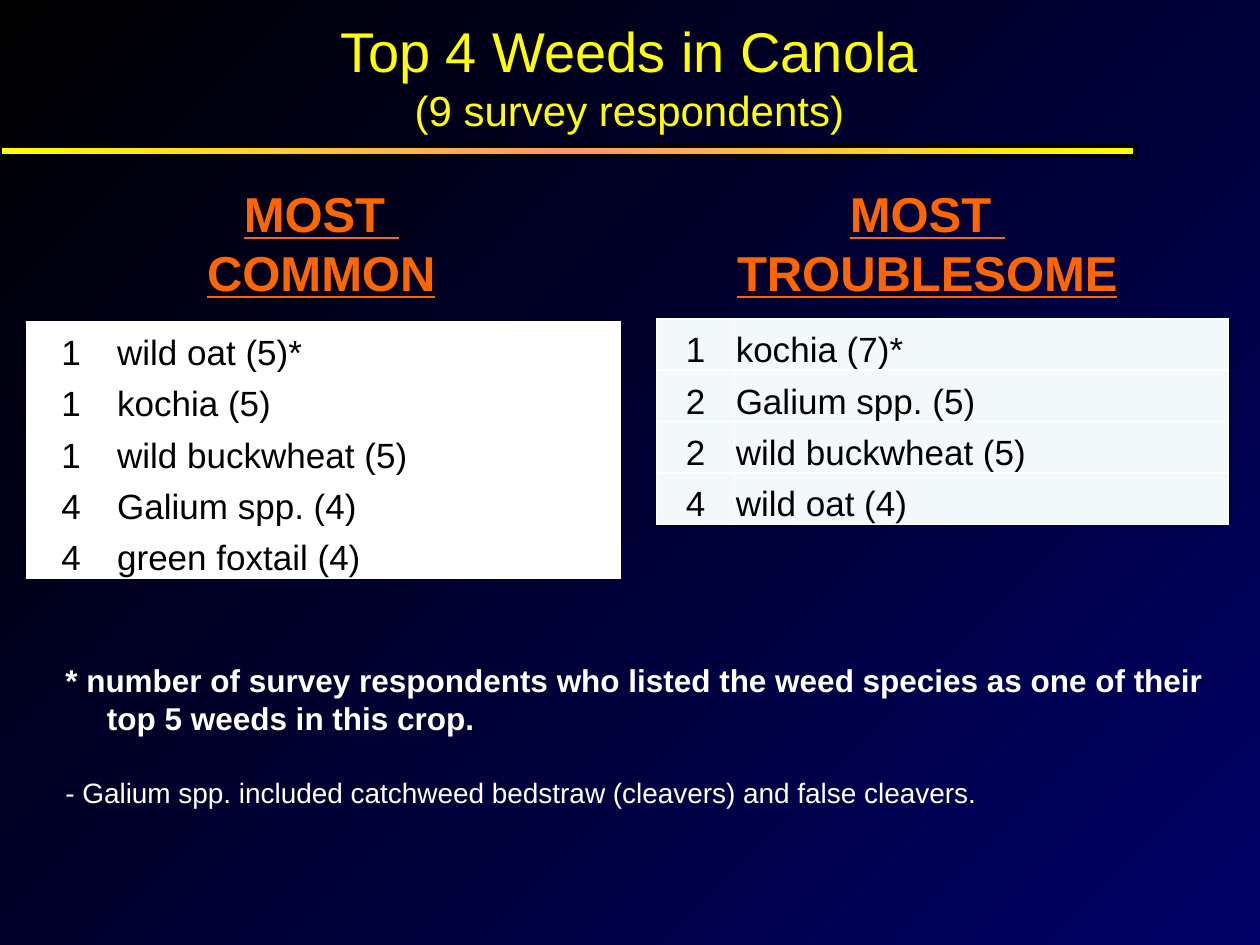
from copy import deepcopy

from lxml.etree import SubElement
from pptx import Presentation
from pptx.dml.color import RGBColor
from pptx.enum.shapes import MSO_SHAPE
from pptx.enum.text import MSO_ANCHOR, PP_ALIGN
from pptx.oxml.ns import qn
from pptx.util import Inches, Pt

COLORS = {
    "black": "000000",
    "navy": "000066",
    "yellow": "FFFF00",
    "peach": "FF9966",
    "orange": "FF6600",
    "white": "FFFFFF",
    "pale": "F3F9FA",
}
COMMON = [("1", "wild oat (5)*"), ("1", "kochia (5)"), ("1", "wild buckwheat (5)"),
          ("4", "Galium spp. (4)"), ("4", "green foxtail (4)")]
TROUBLESOME = [("1", "kochia (7)*"), ("2", "Galium spp. (5)"),
               ("2", "wild buckwheat (5)"), ("4", "wild oat (4)")]
ROW_HEIGHT = 0.408


def rgb(name):
    return RGBColor.from_string(COLORS[name])


def format_paragraph(p, size, color, align=PP_ALIGN.LEFT, bold=False, underline=False):
    p.alignment = align
    p.font.name = "Arial"
    p.font.size = Pt(size)
    p.font.color.rgb = rgb(color)
    p.font.bold = bold
    p.font.underline = underline


def set_gradient(fill, element, names, angle):
    """Fill with evenly spaced colours; element is the XML that holds the fill."""
    fill.gradient()
    fill.gradient_angle = angle
    stop_list = next(element.iter(qn("a:gsLst")))
    for _ in names[2:]:
        stop_list.append(deepcopy(stop_list[0]))
    for i, (stop, name) in enumerate(zip(fill.gradient_stops, names)):
        stop.position = i / (len(names) - 1)
        stop.color.rgb = rgb(name)


def set_borders(cell, name, width):
    props = cell._tc.get_or_add_tcPr()
    for i, side in enumerate(("a:lnL", "a:lnR", "a:lnT", "a:lnB")):
        line = SubElement(props, qn(side), w=str(Pt(width)))
        fill = SubElement(line, qn("a:solidFill"))
        SubElement(fill, qn("a:srgbClr"), val=COLORS[name])
        props.insert(i, line)


def add_title(s, left, top, width, height):
    title = s.shapes.title
    title.left, title.top = Inches(left), Inches(top)
    title.width, title.height = Inches(width), Inches(height)
    tf = title.text_frame
    tf.vertical_anchor = MSO_ANCHOR.MIDDLE
    tf.text = "Top 4 Weeds in Canola\n(9 survey respondents)"
    for p, size in zip(tf.paragraphs, (32, 24)):
        format_paragraph(p, size, "yellow", PP_ALIGN.CENTER)
        p.space_before = Pt(0)
        p.line_spacing = 1.0


def add_rule(s, left, top, width, height):
    sp = s.shapes.add_shape(MSO_SHAPE.RECTANGLE, Inches(left), Inches(top),
                            Inches(width), Inches(height))
    sp.shadow.inherit = False
    set_gradient(sp.fill, sp._element, ["yellow", "peach", "yellow"], 0)
    sp.line.color.rgb = rgb("black")
    sp.line.width = Pt(2.25)


def add_text_box(s, left, top, width, height, text):
    tf = s.shapes.add_textbox(Inches(left), Inches(top),
                              Inches(width), Inches(height)).text_frame
    tf.word_wrap = True
    tf.text = text
    return tf


def add_heading(s, left, top, width, height, text):
    tf = add_text_box(s, left, top, width, height, text)
    for p in tf.paragraphs:
        format_paragraph(p, 28, "orange", PP_ALIGN.CENTER, bold=True, underline=True)


def add_ranking(s, left, top, col_widths, rows, fill):
    table = s.shapes.add_table(len(rows), 2, Inches(left), Inches(top),
                               Inches(sum(col_widths)),
                               Inches(ROW_HEIGHT * len(rows))).table
    table.first_row = table.horz_banding = False
    for column, width in zip(table.columns, col_widths):
        column.width = Inches(width)
    for row, texts in zip(table.rows, rows):
        row.height = Inches(ROW_HEIGHT)
        for cell, text, align in zip(row.cells, texts, (PP_ALIGN.CENTER, PP_ALIGN.LEFT)):
            cell.text = text
            cell.vertical_anchor = MSO_ANCHOR.BOTTOM
            cell.margin_left = cell.margin_right = cell.margin_top = Inches(0.01)
            cell.margin_bottom = 0
            cell.fill.solid()
            cell.fill.fore_color.rgb = rgb(fill)
            set_borders(cell, "white", 1)
            format_paragraph(cell.text_frame.paragraphs[0], 20, "black", align)


def add_notes(s, left, top, width, height):
    tf = add_text_box(
        s, left, top, width, height,
        "* number of survey respondents who listed the weed species as one of their "
        "top 5 weeds in this crop.\n"
        "- Galium spp. included catchweed bedstraw (cleavers) and false cleavers.")
    criterion, species = tf.paragraphs
    format_paragraph(criterion, 18, "white", bold=True)
    format_paragraph(species, 16, "white")
    species.space_before = Pt(22)
    for p, indent in ((criterion, 0.33), (species, 0.12)):
        props = p._p.get_or_add_pPr()
        props.set("marL", str(Inches(indent)))
        props.set("indent", str(-Inches(indent)))


def main():
    prs = Presentation()
    prs.slide_width, prs.slide_height = Inches(10), Inches(7.5)
    s = prs.slides.add_slide(prs.slide_layouts[5])
    set_gradient(s.background.fill, s._element, ["black", "navy"], 315)
    add_title(s, 0.33, 0, 9.33, 1.2)
    add_rule(s, 0, 1.16, 9.01, 0.08)
    add_heading(s, 1.35, 1.41, 2.4, 1.04, "MOST \nCOMMON")
    add_heading(s, 5.73, 1.41, 3.26, 1.04, "MOST \nTROUBLESOME")
    add_ranking(s, 0.21, 2.55, (0.71, 4), COMMON, "white")
    add_ranking(s, 5.21, 2.53, (0.62, 3.92), TROUBLESOME, "pale")
    add_notes(s, 0.42, 5.2, 9.25, 1.28)
    prs.save("out.pptx")


if __name__ == "__main__":
    main()
